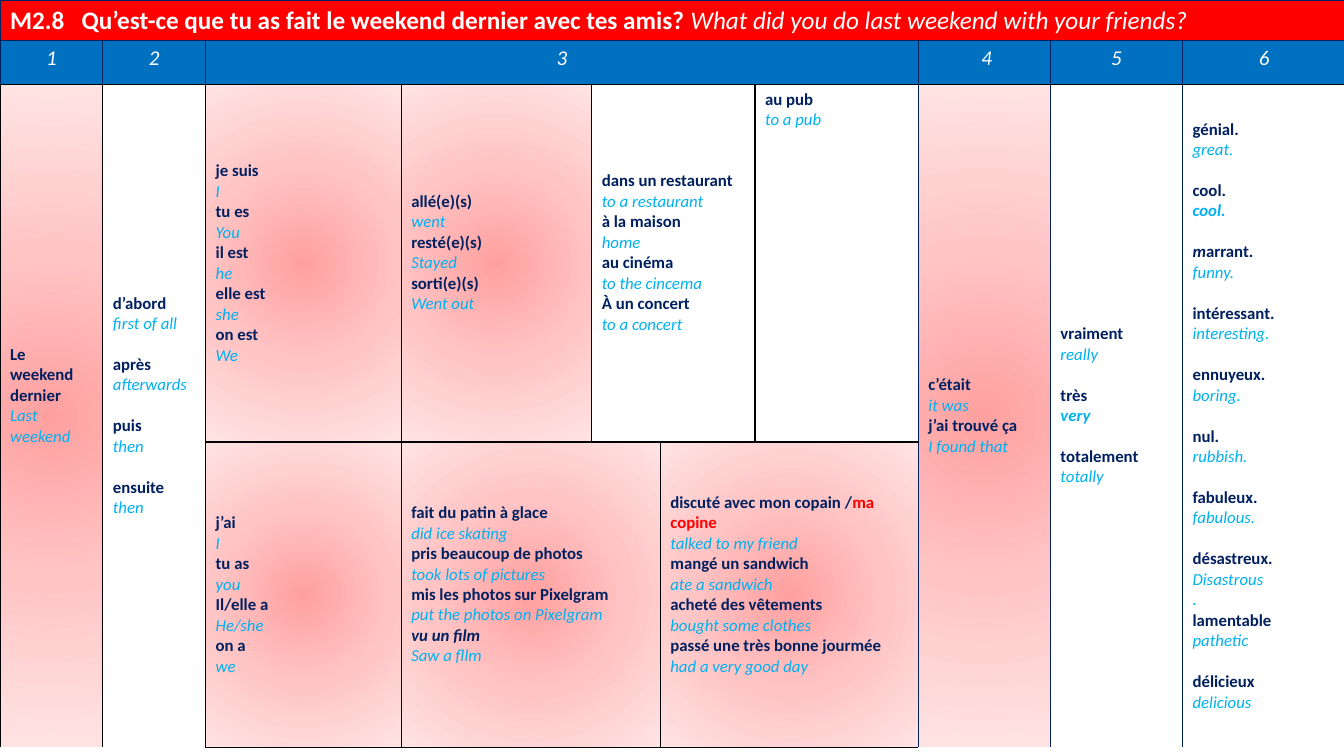
from dataclasses import dataclass, field
from typing import Optional

from lxml.etree import SubElement
from pptx import Presentation
from pptx.dml.color import RGBColor
from pptx.enum.text import MSO_ANCHOR as Anchor, PP_ALIGN as Align
from pptx.oxml.ns import qn
from pptx.util import Inches, Pt


@dataclass(frozen=True)
class Theme:
    font: str = "Calibri"
    title_size: float = 18
    number_size: float = 15
    body_size: float = 12
    gap: float = 14.6
    white: str = "FFFFFF"
    black: str = "000000"
    navy: str = "002060"
    sky: str = "00B0F0"
    red: str = "FF0000"
    blue: str = "0070C0"
    glow: tuple = ((0, "FFA0A0"), (50, "FFC5C5"), (100, "FFE3E3"))


THEME = Theme()


@dataclass(frozen=True)
class Phrase:
    """A French phrase over its English meaning, with any departures in style."""
    french: str
    english: str
    italic_start: int = 0
    red_end: str = ""
    english_bold: bool = False
    tight: bool = False


@dataclass(frozen=True)
class Block:
    """A table cell of phrases; lift is the space kept free below, in lines."""
    row: int
    col: int
    phrases: list = field(default_factory=list)
    rows: int = 1
    cols: int = 1
    glow: bool = False
    spaced: bool = False
    lift: int = 0
    anchor: Anchor = Anchor.MIDDLE


COLUMNS = [1.02, 1.02, 1.94, 1.89, 0.68, 0.94, 1.62, 1.31, 1.31, 1.62]
ROWS = [0.4, 0.43, 3.55, 3.03]
HEADINGS = [("1", 0, 1), ("2", 1, 1), ("3", 2, 5), (" 4", 7, 1), ("5", 8, 1), ("6", 9, 1)]
FIRST_NAVY_COLUMN = 7

BLOCKS = [
    Block(2, 0, [Phrase("Le weekend dernier", "Last weekend")], rows=2, glow=True, lift=2),
    Block(2, 1, [Phrase("d’abord", "first of all"), Phrase("après", "afterwards"),
                 Phrase("puis", "then"), Phrase("ensuite", "then")],
          rows=2, spaced=True, lift=1),
    Block(2, 2, [Phrase("je suis", "I"), Phrase("tu es", "You"), Phrase("il est", "he"),
                 Phrase("elle est", "she"), Phrase("on est", "We")], glow=True),
    Block(2, 3, [Phrase("allé(e)(s)", "went"), Phrase("resté(e)(s)", "Stayed"),
                 Phrase("sorti(e)(s)", "Went out")], glow=True, lift=1),
    Block(2, 4, [Phrase("dans un restaurant", "to a restaurant"), Phrase("à la maison", "home"),
                 Phrase("au cinéma", "to the cincema"), Phrase("À un concert", "to a concert")],
          cols=2, lift=1),
    Block(2, 6, [Phrase("au pub", "to a pub")], anchor=Anchor.TOP),
    Block(2, 7, [Phrase("c’était", "it was"), Phrase("j’ai trouvé ça", "I found that")],
          rows=2, glow=True),
    Block(2, 8, [Phrase("vraiment", "really"), Phrase("très", "very", english_bold=True),
                 Phrase("totalement", "totally")], rows=2, spaced=True, lift=1),
    Block(2, 9, [Phrase("génial.", "great."), Phrase("cool.", "cool.", english_bold=True),
                 Phrase("marrant.", "funny.", italic_start=1),
                 Phrase("intéressant.", "interesting."), Phrase("ennuyeux.", "boring."),
                 Phrase("nul.", "rubbish."), Phrase("fabuleux.", "fabulous."),
                 Phrase("désastreux.", "Disastrous\n."),
                 Phrase("lamentable", "pathetic", tight=True),
                 Phrase("délicieux", "delicious")], rows=2, spaced=True),
    Block(3, 2, [Phrase("j’ai", "I"), Phrase("tu as", "you"), Phrase("Il/elle a", "He/she"),
                 Phrase("on a", "we")], glow=True),
    Block(3, 3, [Phrase("fait du patin à glace", "did ice skating"),
                 Phrase("pris beaucoup de photos", "took lots of pictures"),
                 Phrase("mis les photos sur Pixelgram", "put the photos on Pixelgram"),
                 Phrase("vu un film", "Saw a fllm", italic_start=10)],
          cols=2, glow=True, lift=1),
    Block(3, 5, [Phrase("discuté avec mon copain /", "talked to my friend", red_end="ma copine"),
                 Phrase("mangé un sandwich", "ate a sandwich"),
                 Phrase("acheté des vêtements", "bought some clothes"),
                 Phrase("passé une très bonne jourmée", "had a very good day")],
          cols=2, glow=True, lift=1),
]


def add_text(p, text: str, *, color: str, size: float = THEME.body_size,
             bold: bool = False, italic: bool = False) -> None:
    if not text:
        return
    r = p.add_run()
    r.text = text
    r.font.name, r.font.size = THEME.font, Pt(size)
    r.font.bold, r.font.italic = bold, italic
    r.font.color.rgb = RGBColor.from_string(color)


def add_solid(parent, color: str) -> None:
    SubElement(SubElement(parent, qn("a:solidFill")), qn("a:srgbClr"), val=color)


def add_glow(tc_pr) -> None:
    """Fill a cell with a gradient that spreads from its centre."""
    grad = SubElement(tc_pr, qn("a:gradFill"), rotWithShape="1")
    stops = SubElement(grad, qn("a:gsLst"))
    for percent, color in THEME.glow:
        stop = SubElement(stops, qn("a:gs"), pos=str(percent * 1000))
        SubElement(stop, qn("a:srgbClr"), val=color)
    circle = SubElement(grad, qn("a:path"), path="circle")
    SubElement(circle, qn("a:fillToRect"), l="50000", t="50000", r="50000", b="50000")


def style_cell(table, row: int, col: int, *, rows: int = 1, cols: int = 1,
               fill: Optional[str] = None, side: str = THEME.navy, edge: str = THEME.navy):
    """Merge a cell over its span, draw its outer borders and fill it; no fill means glow."""
    last_row, last_col = row + rows - 1, col + cols - 1
    cell = table.cell(row, col)
    if rows * cols > 1:
        cell.merge(table.cell(last_row, last_col))
    for i in range(row, last_row + 1):
        for j in range(col, last_col + 1):
            tc_pr = table.cell(i, j)._tc.get_or_add_tcPr()
            for tag, outer, color in (("a:lnL", j == col, side), ("a:lnR", j == last_col, side),
                                      ("a:lnT", i == row, edge), ("a:lnB", i == last_row, edge)):
                if outer:
                    add_solid(SubElement(tc_pr, qn(tag), w=str(Pt(1))), color)
            if fill:
                add_solid(tc_pr, fill)
            else:
                add_glow(tc_pr)
    return cell


def add_phrases(cell, block: Block) -> None:
    tf = cell.text_frame
    p = tf.paragraphs[0]
    for n, phrase in enumerate(block.phrases):
        if n:
            p = tf.add_paragraph()
            if block.spaced and not phrase.tight:
                p.space_before = Pt(THEME.gap)
        start = phrase.italic_start
        add_text(p, phrase.french[:start], color=THEME.navy, bold=True, italic=True)
        add_text(p, phrase.french[start:], color=THEME.navy, bold=True)
        add_text(p, phrase.red_end, color=THEME.red, bold=True)
        for line in phrase.english.split("\n"):
            add_text(tf.add_paragraph(), line, color=THEME.sky, italic=True,
                     bold=phrase.english_bold)


def add_title(table) -> None:
    p = style_cell(table, 0, 0, cols=len(COLUMNS), fill=THEME.red).text_frame.paragraphs[0]
    tabs = SubElement(p._p.get_or_add_pPr(), qn("a:tabLst"))
    SubElement(tabs, qn("a:tab"), pos=str(Inches(0.71)), algn="l")
    title = dict(color=THEME.white, size=THEME.title_size)
    add_text(p, "M2.8\tQu’est-ce que tu as fait le weekend dernier avec tes amis? ",
             bold=True, **title)
    add_text(p, "What did you do last weekend with your friends?", italic=True, **title)


def main() -> None:
    prs = Presentation()
    prs.slide_width, prs.slide_height = Inches(13.33), Inches(7.5)
    s = prs.slides.add_slide(prs.slide_layouts[6])
    table = s.shapes.add_table(len(ROWS), len(COLUMNS), 0, 0,
                               Inches(sum(COLUMNS)), Inches(sum(ROWS))).table
    table.first_row = table.horz_banding = False
    for column, width in zip(table.columns, COLUMNS):
        column.width = Inches(width)
    for row, height in zip(table.rows, ROWS):
        row.height = Inches(height)

    add_title(table)
    for number, col, cols in HEADINGS:
        p = style_cell(table, 1, col, cols=cols, fill=THEME.blue).text_frame.paragraphs[0]
        p.alignment = Align.CENTER
        add_text(p, number, color=THEME.white, size=THEME.number_size, italic=True)
    for block in BLOCKS:
        side = THEME.navy if block.col >= FIRST_NAVY_COLUMN else THEME.black
        cell = style_cell(table, block.row, block.col, rows=block.rows, cols=block.cols,
                          fill=None if block.glow else THEME.white, side=side, edge=THEME.black)
        cell.vertical_anchor = block.anchor
        cell.margin_bottom = Inches(0.05) + Pt(THEME.gap * block.lift)
        add_phrases(cell, block)
    prs.save("out.pptx")


if __name__ == "__main__":
    main()
